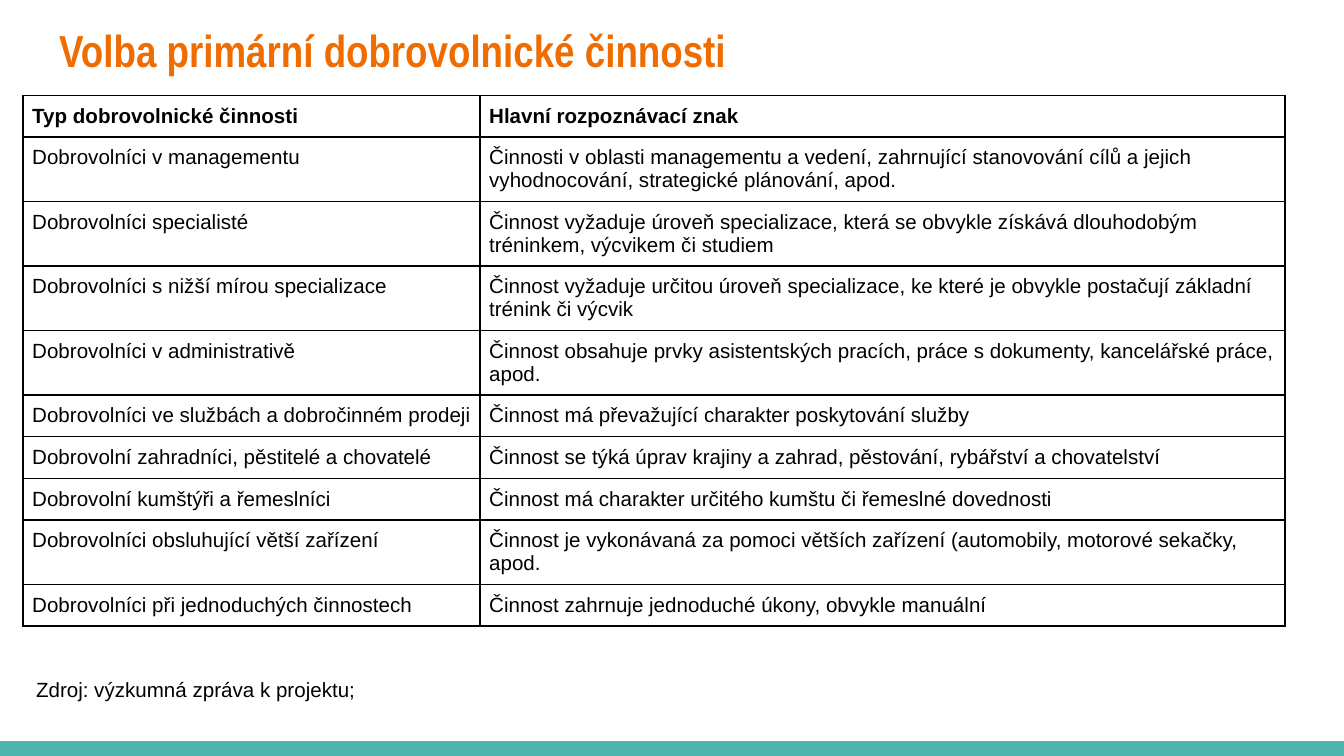
"""Build a slide with a table of volunteer activity types."""
from dataclasses import dataclass

from lxml import etree
from pptx import Presentation
from pptx import util as u
from pptx.dml.color import RGBColor
from pptx.enum import shapes, text
from pptx.oxml import ns


@dataclass(frozen=True)
class Theme:
    title: str = "EF6C00"
    ink: str = "000000"
    bar: str = "4DB6AC"
    title_font: str = "Arial Narrow"
    body_font: str = "Arial"
    title_size: int = 24
    body_size: int = 11
    border: int = 1


THEME = Theme()
WIDTH = 10
HEIGHT = WIDTH * 9 / 16
BAR_HEIGHT = 0.11
TITLE = "Volba primární dobrovolnické činnosti"
SOURCE = "Zdroj: výzkumná zpráva k projektu;"
ROWS = [
    ("Typ dobrovolnické činnosti", "Hlavní rozpoznávací znak"),
    ("Dobrovolníci v managementu",
     "Činnosti v oblasti managementu a vedení, zahrnující stanovování cílů a jejich "
     "vyhodnocování, strategické plánování, apod."),
    ("Dobrovolníci specialisté",
     "Činnost vyžaduje úroveň specializace, která se obvykle získává dlouhodobým "
     "tréninkem, výcvikem či studiem"),
    ("Dobrovolníci s nižší mírou specializace",
     "Činnost vyžaduje určitou úroveň specializace, ke které je obvykle postačují "
     "základní trénink či výcvik"),
    ("Dobrovolníci v administrativě",
     "Činnost obsahuje prvky asistentských pracích, práce s dokumenty, "
     "kancelářské práce, apod."),
    ("Dobrovolníci ve službách a dobročinném prodeji",
     "Činnost má převažující charakter poskytování služby"),
    ("Dobrovolní zahradníci, pěstitelé a chovatelé",
     "Činnost se týká úprav krajiny a zahrad, pěstování, rybářství a chovatelství"),
    ("Dobrovolní kumštýři a řemeslníci",
     "Činnost má charakter určitého kumštu či řemeslné dovednosti"),
    ("Dobrovolníci obsluhující větší zařízení",
     "Činnost je vykonávaná za pomoci větších zařízení (automobily, motorové "
     "sekačky, apod."),
    ("Dobrovolníci při jednoduchých činnostech",
     "Činnost zahrnuje jednoduché úkony, obvykle manuální"),
]
COLUMNS = (3.4, 5.99)
ROW_HEIGHTS = {1: 0.31, 2: 0.48}
LINE_CAPACITY = 80
TABLE_LEFT, TABLE_TOP = 0.17, 0.71


def inches(*lengths):
    return [u.Inches(length) for length in lengths]


def write(frame, words, font=THEME.body_font, size=THEME.body_size,
          color=THEME.ink, bold=False, spacing=1.0):
    frame.word_wrap = True
    para = frame.paragraphs[0]
    para.alignment = text.PP_ALIGN.LEFT
    para.line_spacing = spacing
    span = para.add_run()
    span.text = words
    span.font.name, span.font.size, span.font.bold = font, u.Pt(size), bold
    span.font.color.rgb = RGBColor.from_string(color)


def set_frame(frame, inset=0.1):
    frame.auto_size = text.MSO_AUTO_SIZE.NONE
    frame.vertical_anchor = text.MSO_ANCHOR.TOP
    frame.margin_left = frame.margin_right = u.Inches(inset)
    frame.margin_top = frame.margin_bottom = u.Inches(inset)


def add_borders(cell):
    properties = cell._tc.get_or_add_tcPr()
    for position, side in enumerate(("lnL", "lnR", "lnT", "lnB")):
        line = etree.Element(ns.qn(f"a:{side}"), w=str(u.Pt(THEME.border)))
        fill = etree.SubElement(line, ns.qn("a:solidFill"))
        etree.SubElement(fill, ns.qn("a:srgbClr"), val=THEME.ink)
        properties.insert(position, line)


def add_table(page):
    heights = [ROW_HEIGHTS[1 + (len(sign) > LINE_CAPACITY)] for _, sign in ROWS]
    table = page.shapes.add_table(
        len(ROWS), len(COLUMNS),
        *inches(TABLE_LEFT, TABLE_TOP, sum(COLUMNS), sum(heights))).table
    table.first_row = table.horz_banding = False
    for column, width in zip(table.columns, COLUMNS):
        column.width = u.Inches(width)
    for index, (words, height) in enumerate(zip(ROWS, heights)):
        table.rows[index].height = u.Inches(height)
        for cell, label in zip(table.rows[index].cells, words):
            cell.fill.background()
            cell.margin_left, cell.margin_right = inches(0.07, 0.05)
            cell.margin_top = cell.margin_bottom = u.Inches(0.07)
            add_borders(cell)
            write(cell.text_frame, label, bold=index == 0)


def main():
    deck = Presentation()
    deck.slide_width, deck.slide_height = inches(WIDTH, HEIGHT)
    page = deck.slides.add_slide(deck.slide_layouts[5])

    bar = page.shapes.add_shape(
        shapes.MSO_SHAPE.RECTANGLE,
        *inches(0, HEIGHT - BAR_HEIGHT, WIDTH, BAR_HEIGHT))
    bar.shadow.inherit = False
    bar.fill.solid()
    bar.fill.fore_color.rgb = RGBColor.from_string(THEME.bar)
    bar.line.fill.background()

    title = page.shapes.title
    title.left, title.top, title.width, title.height = inches(0.34, 0.07, 9.32, 0.46)
    set_frame(title.text_frame)
    write(title.text_frame, TITLE, font=THEME.title_font, size=THEME.title_size,
          color=THEME.title, bold=True)

    add_table(page)

    source = page.shapes.add_textbox(*inches(TABLE_LEFT, 4.91, 5.54, 0.49))
    set_frame(source.text_frame)
    write(source.text_frame, SOURCE, spacing=1.15)
    deck.save("out.pptx")


if __name__ == "__main__":
    main()
